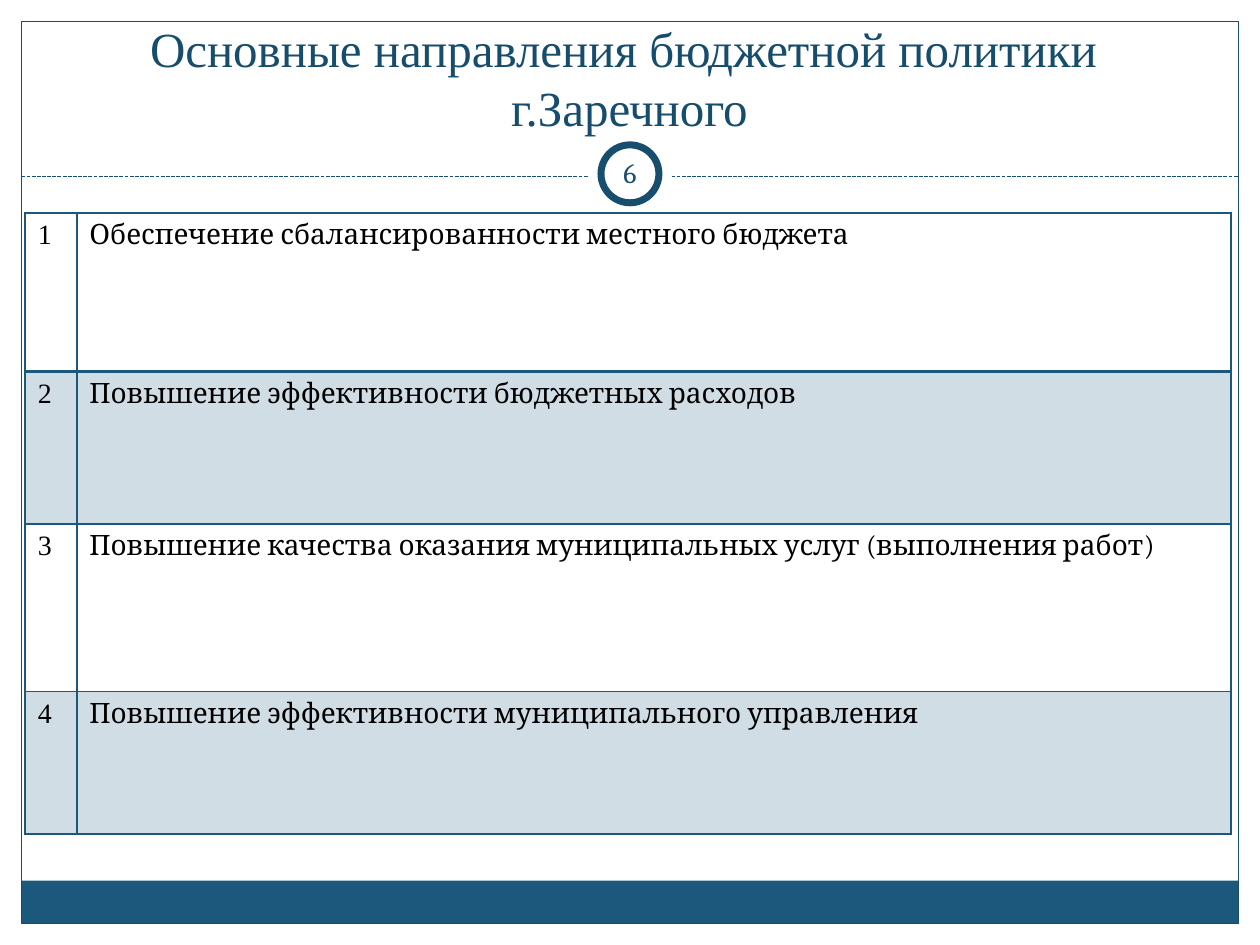
"""Build the slide on the main directions of municipal budget policy."""
import dataclasses
import typing

import lxml.etree
import pptx
import pptx.dml.color
import pptx.enum.dml
import pptx.enum.shapes
import pptx.enum.text
import pptx.oxml.ns
import pptx.util

WIDTH, HEIGHT = 10, 7.5
MARGIN = 0.17
RULE_TOP = 1.4
SHAPES = pptx.enum.shapes.MSO_SHAPE
ANCHORS = pptx.enum.text.MSO_ANCHOR
CENTER = pptx.enum.text.PP_ALIGN.CENTER
qn = pptx.oxml.ns.qn


@dataclasses.dataclass(frozen=True)
class Theme:
    paper: str = "FFFFFF"
    band: str = "1B587C"
    outline: str = "184E6D"
    title: str = "164C6C"
    ink: str = "000000"
    band_opacity: int = 20
    title_size: int = 28
    body_size: int = 16
    serif: str = "Times New Roman"
    body: str = "Cambria"


@dataclasses.dataclass(frozen=True)
class Box:
    left: float
    top: float
    width: float
    height: float

    def lengths(self) -> list[int]:
        return [pptx.util.Inches(value) for value in dataclasses.astuple(self)]


@dataclasses.dataclass(frozen=True)
class Direction:
    text: str
    height: float
    shaded: bool = False


THEME = Theme()
FRAME = Box(MARGIN, MARGIN, WIDTH - 2 * MARGIN, HEIGHT - 2 * MARGIN)
TABLE = Box(0.2, 1.69, 9.57, 4.93)
NUMBER_COLUMN = 0.41
DIRECTIONS = [
    Direction("Обеспечение сбалансированности местного бюджета", 1.26),
    Direction("Повышение эффективности бюджетных расходов", 1.21, True),
    Direction("Повышение качества оказания муниципальных услуг (выполнения работ)", 1.33),
    Direction("Повышение эффективности муниципального управления", 1.13, True),
]


def rgb(value: str) -> pptx.dml.color.RGBColor:
    return pptx.dml.color.RGBColor.from_string(value)


def add_child(parent: typing.Any, tag: str, **attributes: object) -> typing.Any:
    texts = {name: str(value) for name, value in attributes.items()}
    return lxml.etree.SubElement(parent, qn(tag), texts)


def style_text(text_frame: typing.Any, font: str, size: float, color: str) -> None:
    for para in text_frame.paragraphs:
        for span in para.runs:
            span.font.name = font
            span.font.size = pptx.util.Pt(size)
            span.font.color.rgb = rgb(color)


def add_panel(page: typing.Any, kind: SHAPES, box: Box, fill: str | None = None,
              line_width: float = 0) -> None:
    panel = page.shapes.add_shape(kind, *box.lengths())
    panel.shadow.inherit = False
    if fill:
        panel.fill.solid()
        panel.fill.fore_color.rgb = rgb(fill)
    else:
        panel.fill.background()
    if line_width:
        panel.line.color.rgb = rgb(THEME.outline)
        panel.line.width = pptx.util.Pt(line_width)
    else:
        panel.line.fill.background()


def add_disc(page: typing.Any, diameter: float, line_width: float = 0) -> None:
    box = Box((WIDTH - diameter) / 2, 1.38 - diameter / 2, diameter, diameter)
    add_panel(page, SHAPES.OVAL, box, THEME.paper, line_width)


def add_rule(page: typing.Any) -> None:
    ends = Box(MARGIN, RULE_TOP, WIDTH - MARGIN, RULE_TOP).lengths()
    rule = page.shapes.add_connector(pptx.enum.shapes.MSO_CONNECTOR.STRAIGHT, *ends)
    rule.line.color.rgb = rgb(THEME.outline)
    rule.line.width = pptx.util.Pt(0.75)
    rule.line.dash_style = pptx.enum.dml.MSO_LINE.SQUARE_DOT
    add_child(rule._element.spPr, "a:effectLst")


def set_title(page: typing.Any, text: str) -> None:
    title = page.shapes.title
    title.left, title.top, title.width, title.height = Box(0.19, 0.16, 9.61, 0.97).lengths()
    title.text_frame.text = text
    title.text_frame.word_wrap = True
    title.text_frame.vertical_anchor = ANCHORS.BOTTOM
    title.text_frame.paragraphs[0].alignment = CENTER
    style_text(title.text_frame, THEME.serif, THEME.title_size, THEME.title)
    for span in title.text_frame.paragraphs[0].runs:
        effects = lxml.etree.Element(qn("a:effectLst"))
        span.font._element.find(qn("a:solidFill")).addnext(effects)
        shadow = add_child(effects, "a:outerShdw", blurRad=38100, dist=38100, dir=2700000)
        color = add_child(shadow, "a:srgbClr", val=THEME.ink)
        add_child(color, "a:alpha", val=43000)


def add_page_number(page: typing.Any, text: str) -> None:
    number = page.shapes.add_textbox(*Box(4.75, 1.13, 0.5, 0.48).lengths())
    frame = number.text_frame
    frame.text = text
    frame.word_wrap = True
    frame.vertical_anchor = ANCHORS.MIDDLE
    frame.margin_left = frame.margin_right = pptx.util.Inches(0.05)
    frame.margin_top = frame.margin_bottom = pptx.util.Inches(0.05)
    frame.paragraphs[0].alignment = CENTER
    style_text(frame, THEME.body, THEME.body_size, THEME.outline)


def set_borders(cell: typing.Any, widths: dict[str, float]) -> None:
    properties = cell._tc.get_or_add_tcPr()
    for side, width in widths.items():
        line = add_child(properties, f"a:ln{side}", w=pptx.util.Pt(width))
        add_child(add_child(line, "a:solidFill"), "a:srgbClr", val=THEME.band)


def fill_cell(cell: typing.Any, text: str, font: str, shaded: bool) -> None:
    cell.text_frame.text = text
    style_text(cell.text_frame, font, THEME.body_size, THEME.ink)
    if shaded:
        cell.fill.solid()
        cell.fill.fore_color.rgb = rgb(THEME.band)
        color = cell._tc.tcPr.find(qn("a:solidFill")).find(qn("a:srgbClr"))
        add_child(color, "a:alpha", val=THEME.band_opacity * 1000)
    else:
        cell.fill.background()


def add_directions(page: typing.Any) -> None:
    table = page.shapes.add_table(len(DIRECTIONS), 2, *TABLE.lengths()).table
    table.first_row = table.horz_banding = False
    table.columns[0].width = pptx.util.Inches(NUMBER_COLUMN)
    table.columns[1].width = pptx.util.Inches(TABLE.width - NUMBER_COLUMN)
    for index, direction in enumerate(DIRECTIONS):
        table.rows[index].height = pptx.util.Inches(direction.height)
        top = 2 if index == 1 else 1
        bottom = 2 if index == 0 else 1
        entries = [(str(index + 1), THEME.serif), (direction.text, THEME.body)]
        for column, (text, font) in enumerate(entries):
            cell = table.cell(index, column)
            set_borders(cell, {"L": 1, "R": 1, "T": top, "B": bottom})
            fill_cell(cell, text, font, direction.shaded)


def main() -> None:
    deck = pptx.Presentation()
    deck.slide_width, deck.slide_height = pptx.util.Inches(WIDTH), pptx.util.Inches(HEIGHT)
    page = deck.slides.add_slide(deck.slide_layouts[5])
    add_panel(page, SHAPES.RECTANGLE, Box(MARGIN, 6.99, FRAME.width, 0.34), THEME.band)
    add_panel(page, SHAPES.RECTANGLE, FRAME, line_width=0.75)
    add_rule(page)
    add_disc(page, 0.67)
    add_disc(page, 0.46, line_width=4)
    set_title(page, "Основные направления бюджетной политики \vг.Заречного")
    add_page_number(page, "6")
    add_directions(page)
    deck.save("out.pptx")


if __name__ == "__main__":
    main()
